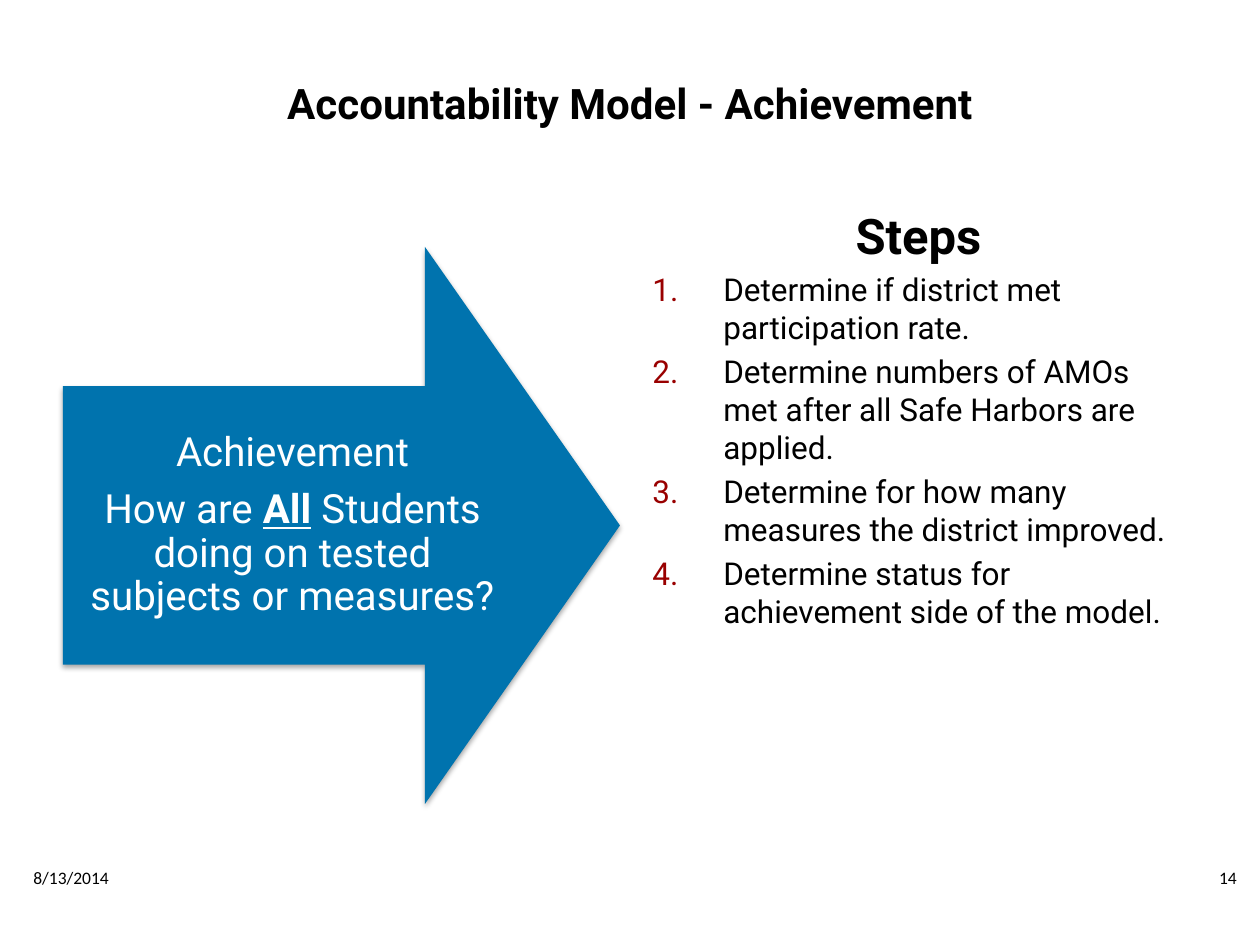
"""Build the accountability model slide on achievement."""
from lxml import etree
from pptx import Presentation
from pptx import util as u
from pptx.dml.color import RGBColor
from pptx.enum import shapes, text
from pptx.oxml import parse_xml
from pptx.oxml.ns import nsdecls, qn

SCALE = u.Inches(1) / 126
THEME = {
    "heading_font": "Roboto", "footer_font": "Calibri",
    "black": RGBColor.from_string("000000"),
    "white": RGBColor.from_string("FFFFFF"),
    "arrow": RGBColor.from_string("0073AE"),
    "number": "990000",
    "title": 24, "steps": 28, "question": 23, "body": 18, "footer": 10,
}


def px(length):
    return u.Emu(round(length * SCALE))


def add_run(paragraph, words, size, color="black", bold=False, font="heading_font"):
    run = paragraph.add_run()
    run.text = words
    run.font.name = THEME[font]
    run.font.size = u.Pt(THEME[size])
    run.font.color.rgb = THEME[color]
    run.font.bold = bold
    return run


presentation = Presentation()
presentation.slide_width, presentation.slide_height = px(1260), px(945)
slide = presentation.slides.add_slide(presentation.slide_layouts[6])

title = slide.shapes.add_textbox(px(63), px(38), px(1134), px(130)).text_frame
title.word_wrap = True
title.vertical_anchor = text.MSO_ANCHOR.MIDDLE
title.paragraphs[0].alignment = text.PP_ALIGN.CENTER
add_run(title.paragraphs[0], "Accountability Model - Achievement", "title", bold=True)

arrow = slide.shapes.add_shape(
    shapes.MSO_SHAPE.RIGHT_ARROW, px(63), px(247), px(557), px(557))
arrow.adjustments[0], arrow.adjustments[1] = 0.5, 0.35
arrow.fill.solid()
arrow.fill.fore_color.rgb = THEME["arrow"]
arrow.line.fill.background()
arrow.shadow.inherit = False
effects = arrow._element.spPr.find(qn("a:effectLst"))
effects.append(parse_xml(
    f'<a:outerShdw {nsdecls("a")} blurRad="39370" dist="22860" dir="5400000" '
    'rotWithShape="0"><a:srgbClr val="000000"><a:alpha val="35000"/>'
    '</a:srgbClr></a:outerShdw>'))

question = arrow.text_frame
question.word_wrap = True
question.vertical_anchor = text.MSO_ANCHOR.MIDDLE
question.margin_left = question.margin_right = px(23)
question.margin_top = question.margin_bottom = px(23)
question_lines = [
    [("Achievement", False)],
    [("How are ", False), ("All", True),
     (" Students doing on tested subjects or measures?", False)],
]
for index, runs in enumerate(question_lines):
    paragraph = question.add_paragraph() if index else question.paragraphs[0]
    paragraph.alignment = text.PP_ALIGN.CENTER
    paragraph.line_spacing = 0.9
    paragraph.space_after = u.Pt(8)
    for words, stressed in runs:
        run = add_run(paragraph, words, "question", "white", stressed)
        run.font.underline = stressed

steps = slide.shapes.add_textbox(px(640), px(199), px(557), px(645)).text_frame
steps.word_wrap = True
steps.paragraphs[0].alignment = text.PP_ALIGN.CENTER
add_run(steps.paragraphs[0], "Steps", "steps", bold=True)
for step in [
    "Determine if district met participation rate.",
    "Determine numbers of AMOs met after all Safe Harbors are applied.",
    "Determine for how many measures the district improved.",
    "Determine status for achievement side of the model.",
]:
    paragraph = steps.add_paragraph()
    paragraph.space_before = u.Pt(3.6)
    properties = paragraph._p.get_or_add_pPr()
    properties.set("marL", str(px(71)))
    properties.set("indent", str(-px(71)))
    number_color = etree.SubElement(properties, qn("a:buClr"))
    etree.SubElement(number_color, qn("a:srgbClr"), val=THEME["number"])
    etree.SubElement(properties, qn("a:buFont"), typeface="+mj-lt")
    etree.SubElement(properties, qn("a:buAutoNum"), type="arabicPeriod")
    add_run(paragraph, step, "body")

for left, words, alignment in [
    (21, "8/13/2014", text.PP_ALIGN.LEFT),
    (955, "14", text.PP_ALIGN.RIGHT),
]:
    footer = slide.shapes.add_textbox(px(left), px(861), px(294), px(66)).text_frame
    footer.word_wrap = True
    footer.paragraphs[0].alignment = alignment
    add_run(footer.paragraphs[0], words, "footer", font="footer_font")

presentation.save("out.pptx")
